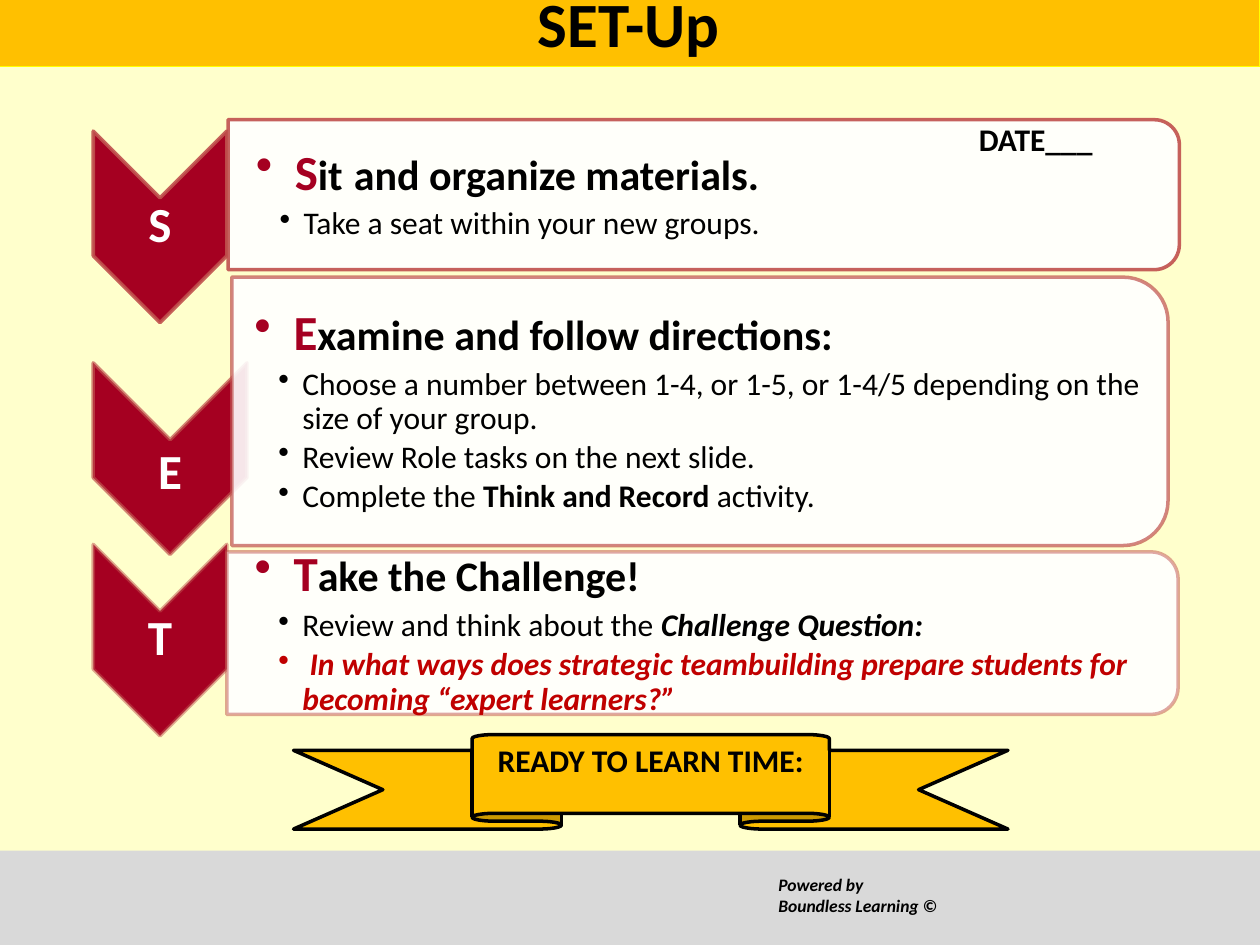
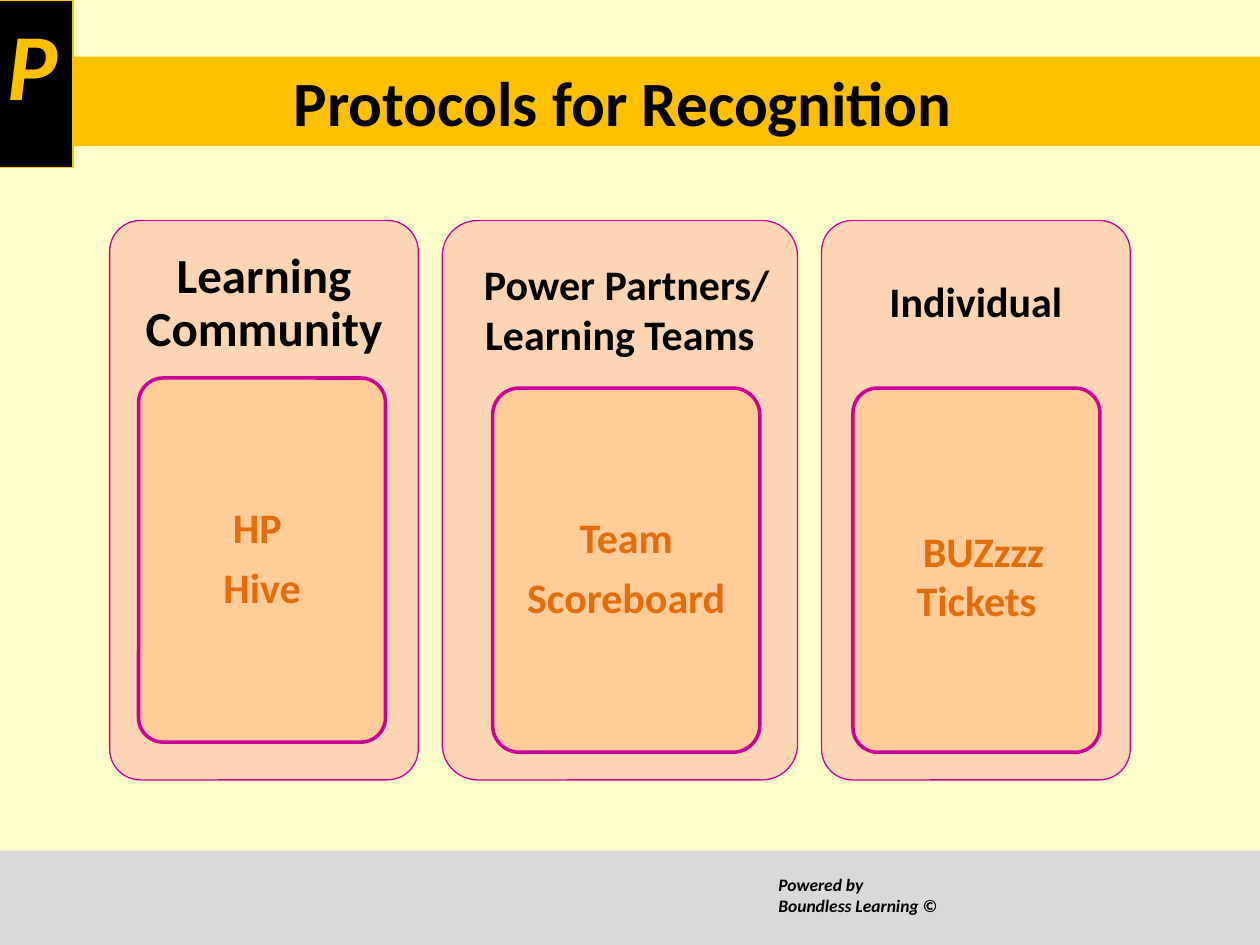
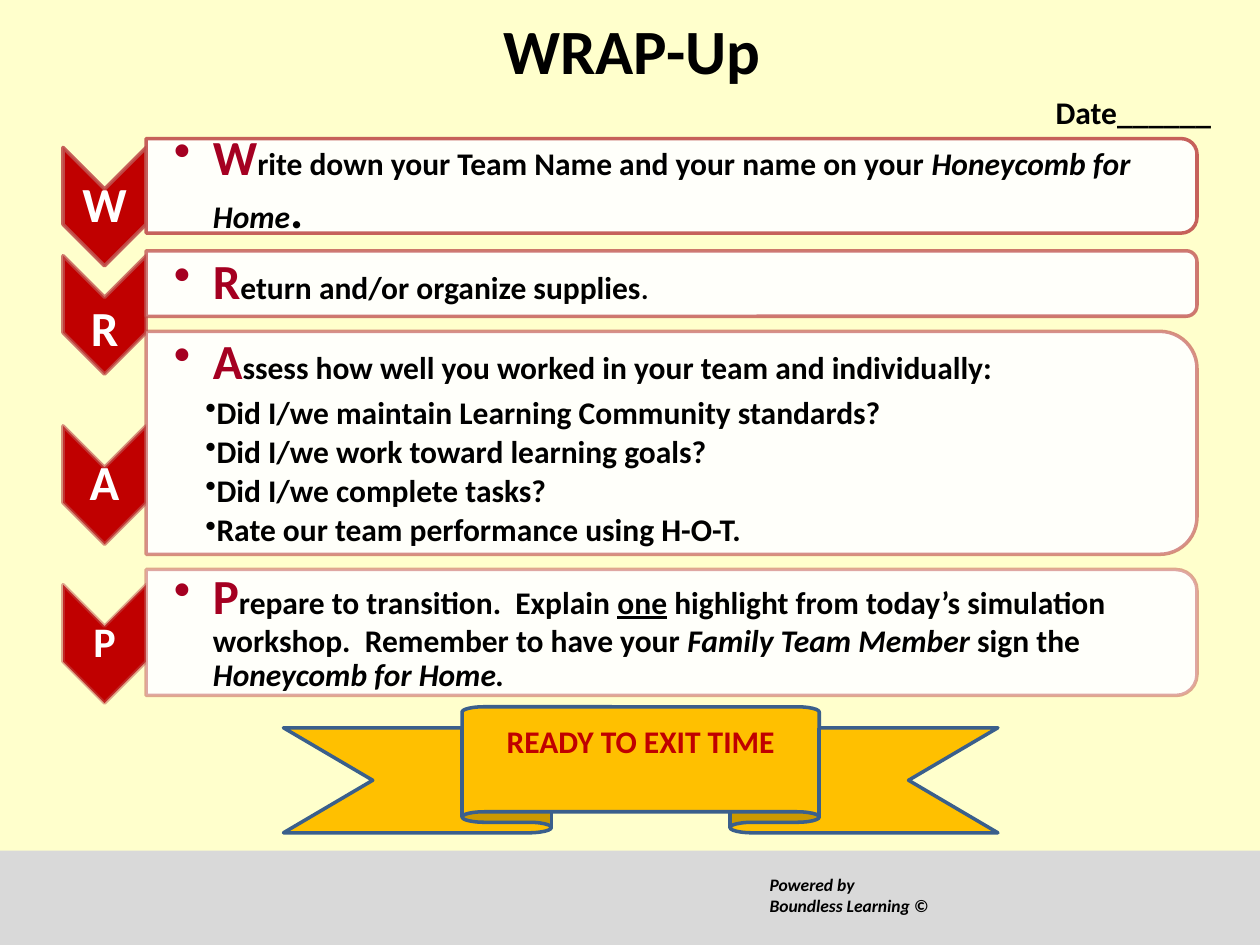
from lxml import etree
from pptx import Presentation
from pptx.dml.color import RGBColor
from pptx.enum.shapes import MSO_SHAPE
from pptx.enum.text import MSO_ANCHOR, MSO_AUTO_SIZE, PP_ALIGN
from pptx.oxml.ns import qn
from pptx.util import Inches, Pt

RECTANGLE = MSO_SHAPE.RECTANGLE
ROUNDED = MSO_SHAPE.ROUNDED_RECTANGLE
CHEVRON = MSO_SHAPE.CHEVRON
PANEL = MSO_SHAPE.ROUND_2_SAME_RECTANGLE
RIBBON = MSO_SHAPE.UP_RIBBON
TOP, MIDDLE = MSO_ANCHOR.TOP, MSO_ANCHOR.MIDDLE
LEFT, CENTER = PP_ALIGN.LEFT, PP_ALIGN.CENTER
NO_AUTOFIT = MSO_AUTO_SIZE.NONE

FONT = "Calibri"
BLACK, WHITE = "000000", "FFFFFF"
CREAM, GRAY, GOLD, YELLOW = "FFFFCC", "D9D9D9", "FFC000", "FFFF00"
CRIMSON, RED, BRICK, NAVY = "A50021", "C00000", "C0504D", "3A5F8C"
PEACH, APRICOT, MAGENTA, ORANGE = "FCD5B5", "FFCC99", "CC0099", "E46C0A"
TITLE_ONLY = 5


def rgb(color):
    return RGBColor.from_string(color)


def set_opacity(element, percent):
    for color in element.iter(qn("a:srgbClr")):
        etree.SubElement(color, qn("a:alpha")).set("val", str(percent * 1000))


def add_span(para, text, size=18, color=BLACK, bold=True, italic=False, underline=False):
    span = para.add_run()
    span.text = text
    font = span.font
    font.name, font.size, font.color.rgb = FONT, Pt(size), rgb(color)
    font.bold, font.italic, font.underline = bold, italic, underline


def add_bullet(para, margin, indent):
    properties = para._p.get_or_add_pPr()
    properties.set("marL", str(Inches(margin)))
    properties.set("indent", str(Inches(indent)))
    etree.SubElement(properties, qn("a:buChar")).set("char", "•")


def span(text, **style):
    return text, style


def heading(initial, *spans):
    """A bulleted line that opens with a large coloured initial."""
    return {"spans": [span(initial, size=28, color=CRIMSON), *spans],
            "bullet": (0.31, -0.31), "after": 4}


def item(*spans, bullet=(0.38, -0.19)):
    return {"spans": spans, "bullet": bullet, "after": 3}


def line(*spans, after=0):
    return {"spans": spans, "after": after}


class SlideBuilder:
    """Holds the deck's style and the slide being built."""

    def __init__(self):
        self.deck = Presentation()
        self.deck.slide_width, self.deck.slide_height = Inches(10), Inches(7.5)
        background = self.deck.slide_master.background.fill
        background.solid()
        background.fore_color.rgb = rgb(CREAM)
        self.slide = None

    def new_slide(self, footer_left=6.08):
        layout = self.deck.slide_layouts[TITLE_ONLY]
        self.slide = self.deck.slides.add_slide(layout)
        self.shape(RECTANGLE, 0, 6.75, 10, 0.75, GRAY)
        footer = self.shape(RECTANGLE, footer_left, 6.89, 1.6, 0.61, GRAY)
        self.set_lines(footer, [line(span(text, size=10, italic=True))
                                for text in ("Powered by", "Boundless Learning ©")])

    def paint(self, shape, fill, outline=None, weight=2.0):
        shape.fill.solid()
        shape.fill.fore_color.rgb = rgb(fill)
        if outline:
            shape.line.color.rgb = rgb(outline)
            shape.line.width = Pt(weight)
        else:
            shape.line.fill.background()

    def shape(self, kind, left, top, width, height, fill, outline=None, weight=2.0):
        shape = self.slide.shapes.add_shape(
            kind, Inches(left), Inches(top), Inches(width), Inches(height))
        shape.shadow.inherit = False
        self.paint(shape, fill, outline, weight)
        return shape

    def turned(self, kind, left, top, width, height, fill, opacity):
        """A shape turned by 90 degrees that fills the given upright box."""
        shift = (width - height) / 2
        shape = self.shape(kind, left + shift, top - shift, height, width, fill, BRICK)
        shape.rotation = 90
        set_opacity(shape.element.spPr.find(qn("a:ln")), opacity)
        return shape

    def set_lines(self, shape, lines, align=LEFT, anchor=TOP,
                  insets=(0.1, 0.05, 0.1, 0.05), spacing=1.0):
        frame = shape.text_frame
        frame.auto_size, frame.word_wrap = NO_AUTOFIT, True
        frame.vertical_anchor = anchor
        (frame.margin_left, frame.margin_top,
         frame.margin_right, frame.margin_bottom) = map(Inches, insets)
        for number, content in enumerate(lines):
            para = frame.add_paragraph() if number else frame.paragraphs[0]
            para.alignment, para.line_spacing = align, spacing
            para.space_after = Pt(content["after"])
            if "bullet" in content:
                add_bullet(para, *content["bullet"])
            for text, style in content["spans"]:
                add_span(para, text, **style)

    def text(self, left, top, width, height, lines, **layout):
        box = self.slide.shapes.add_textbox(
            Inches(left), Inches(top), Inches(width), Inches(height))
        self.set_lines(box, lines, **layout)

    def title(self, text, left, top, width, fill=None, outline=None):
        title = self.slide.shapes.title
        title.left, title.top = Inches(left), Inches(top)
        title.width, title.height = Inches(width), Inches(0.71)
        if fill:
            self.paint(title, fill, outline, 0.75)
        self.set_lines(title, [line(span(text, size=36))], align=CENTER, anchor=MIDDLE)

    def chevron(self, letter, left, top, width, height, fill, opacity, drop=0, size=28):
        self.turned(CHEVRON, left, top, width, height, fill, opacity)
        self.text(left, top + drop, width, height,
                  [line(span(letter, size=size, color=WHITE))],
                  align=CENTER, anchor=MIDDLE, insets=(0.02,) * 4, spacing=0.9)

    def panel(self, left, top, width, height, lines, opacity, inset=0.22):
        shape = self.turned(PANEL, left, top, width, height, WHITE, opacity)
        set_opacity(shape.element.spPr.find(qn("a:solidFill")), 90)
        self.text(left, top, width - 0.06, height, lines, anchor=MIDDLE,
                  insets=(inset, 0.02, 0.02, 0.02), spacing=0.9)

    def steps(self, steps, fill):
        """Draws chevron and panel pairs whose outlines fade from 90 to 50 percent."""
        for number, (chevron, panel) in enumerate(steps):
            opacity = round(90 - 40 * number / (len(steps) - 1))
            self.chevron(**chevron, fill=fill, opacity=opacity)
            self.panel(**panel, opacity=opacity)

    def ribbon(self, text, left, top, height, outline, color, inset):
        ribbon = self.shape(RIBBON, left, top, 5.67, height, GOLD, outline)
        self.set_lines(ribbon, [line(span(text, color=color))], align=CENTER,
                       insets=(0.1, inset, 0.1, 0.05))

    def card(self, left, top, width, height, fill, weight, lines, text_height, inset):
        card = self.shape(ROUNDED, left, top, width, height, fill, MAGENTA, weight)
        card.adjustments[0] = 0.1
        self.text(left, top, width, text_height, lines, align=CENTER, anchor=MIDDLE,
                  insets=(inset,) * 4, spacing=0.9)

    def date(self, text, left, top, width):
        self.text(left, top, width, 0.4, [line(span(text))])


def build_set_up(builder):
    builder.new_slide()
    builder.title("SET-Up", -0.02, -0.18, 10.02, GOLD, YELLOW)
    sit = [heading("S", span("it", size=24), span(" ", size=28),
                   span("and organize materials.", size=24)),
           item(span("Take a seat within your new groups.", bold=False))]
    examine = [
        heading("E", span("xamine and follow directions:", size=24)),
        item(span("Choose a number between 1-4, or 1-5, or 1-4/5 depending on the "
                  "size of your group.", bold=False)),
        item(span("Review Role tasks on the next slide.", bold=False)),
        item(span("Complete the ", bold=False), span("Think and Record "),
             span("activity.", bold=False))]
    take = [
        heading("T", span("ake the Challenge!", size=24)),
        item(span("Review and think about the ", bold=False),
             span("Challenge Question:", italic=True)),
        item(span(" ", color=RED, bold=False),
             span("In what ways does strategic teambuilding prepare students for "
                  "becoming “expert learners?”", color=RED, italic=True))]
    chevron = {"left": 0.74, "height": 1.52}
    builder.steps([
        (dict(chevron, letter="S", top=1.04, width=1.06),
         dict(left=1.81, top=0.95, width=7.55, height=1.19, lines=sit)),
        (dict(chevron, letter="E", top=2.88, width=1.22, drop=0.12),
         dict(left=1.84, top=2.2, width=7.43, height=2.13, lines=examine, inset=0.18)),
        (dict(chevron, letter="T", top=4.32, width=1.06),
         dict(left=1.8, top=4.38, width=7.55, height=1.29, lines=take)),
    ], CRIMSON)
    builder.ribbon("READY TO LEARN TIME:", 2.33, 5.83, 0.75, BLACK, BLACK, 0.05)
    builder.date("DATE___", 7.67, 0.9, 1.19)


def build_protocols(builder):
    builder.new_slide()
    builder.title("Protocols for Recognition ", 0, 0.45, 10, GOLD)

    def reward(*texts):
        return [line(span(text, size=24, color=ORANGE), after=8.4) for text in texts]

    tickets = [line(span(" ", size=35), span("BUZzzz Tickets", size=24, color=ORANGE))]
    columns = [
        (2.45, [span("Learning Community", size=28)],
         0.23, 3.0, 1.96, reward("HP ", "Hive")),
        (2.82, [span(" ", size=34), span("Power Partners/ Learning Teams", size=24)],
         0.4, 3.08, 2.12, reward("Team", "Scoreboard")),
        (2.45, [span("Individual", size=24)], 0.25, 3.08, 1.96, tickets),
    ]
    left, gap = 0.87, 0.19
    for width, header, offset, reward_top, reward_width, rewards in columns:
        builder.card(left, 1.75, width, 4.44, PEACH, 0.75, [line(*header)], 1.33, 0.12)
        builder.card(left + offset, reward_top, reward_width, 2.89, APRICOT, 2,
                     rewards, 2.89, 0.12)
        left += width + gap

    badge = builder.shape(RECTANGLE, -0.04, 0, 0.62, 1.33, BLACK, GOLD, 0.75)
    builder.set_lines(badge, [line(span("P", size=54, color=GOLD, italic=True))])


def build_wrap_up(builder):
    builder.new_slide(footer_left=6.01)
    builder.ribbon("READY TO EXIT TIME", 2.25, 5.61, 1, NAVY, RED, 0.12)
    name_sheet = [heading("W", span("rite down your Team Name and your name on your "),
                          span("Honeycomb for Home", italic=True), span(".", size=28))]
    put_back = [heading("R", span("eturn and/or organize supplies"), span(".", size=16))]
    questions = ("Did I/we maintain Learning Community standards?",
                 "Did I/we work toward learning goals?",
                 "Did I/we complete tasks?",
                 "Rate our team performance using H-O-T.")
    assess = [heading("A", span("ssess how well you worked in your team and individually:")),
              *(item(span(question), bullet=(0.25, 0)) for question in questions)]
    prepare = [heading(
        "P", span("repare to transition.  Explain "), span("one", underline=True),
        span(" highlight from today’s simulation workshop.  Remember to have your "),
        span("Family Team Member ", italic=True), span("sign the "),
        span("Honeycomb for Home.", italic=True))]
    chevron = {"left": 0.5, "width": 0.66, "height": 0.94}
    panel = {"left": 1.16, "width": 8.34}
    builder.steps([
        (dict(chevron, letter="W", top=1.17),
         dict(panel, top=1.1, height=0.75, lines=name_sheet)),
        (dict(chevron, letter="R", top=2.03, drop=0.12),
         dict(panel, top=1.99, height=0.52, lines=put_back)),
        (dict(chevron, letter="A", top=3.38),
         dict(panel, top=2.63, height=1.77, lines=assess)),
        (dict(chevron, letter="P", top=4.64, size=24),
         dict(panel, top=4.52, height=1, lines=prepare)),
    ], RED)
    builder.date("Date______", 8.28, 0.69, 1.44)
    builder.title("WRAP-Up", 3.88, 0.04, 2.27)


def main():
    builder = SlideBuilder()
    build_set_up(builder)
    build_protocols(builder)
    build_wrap_up(builder)
    builder.deck.save("out.pptx")


if __name__ == "__main__":
    main()
